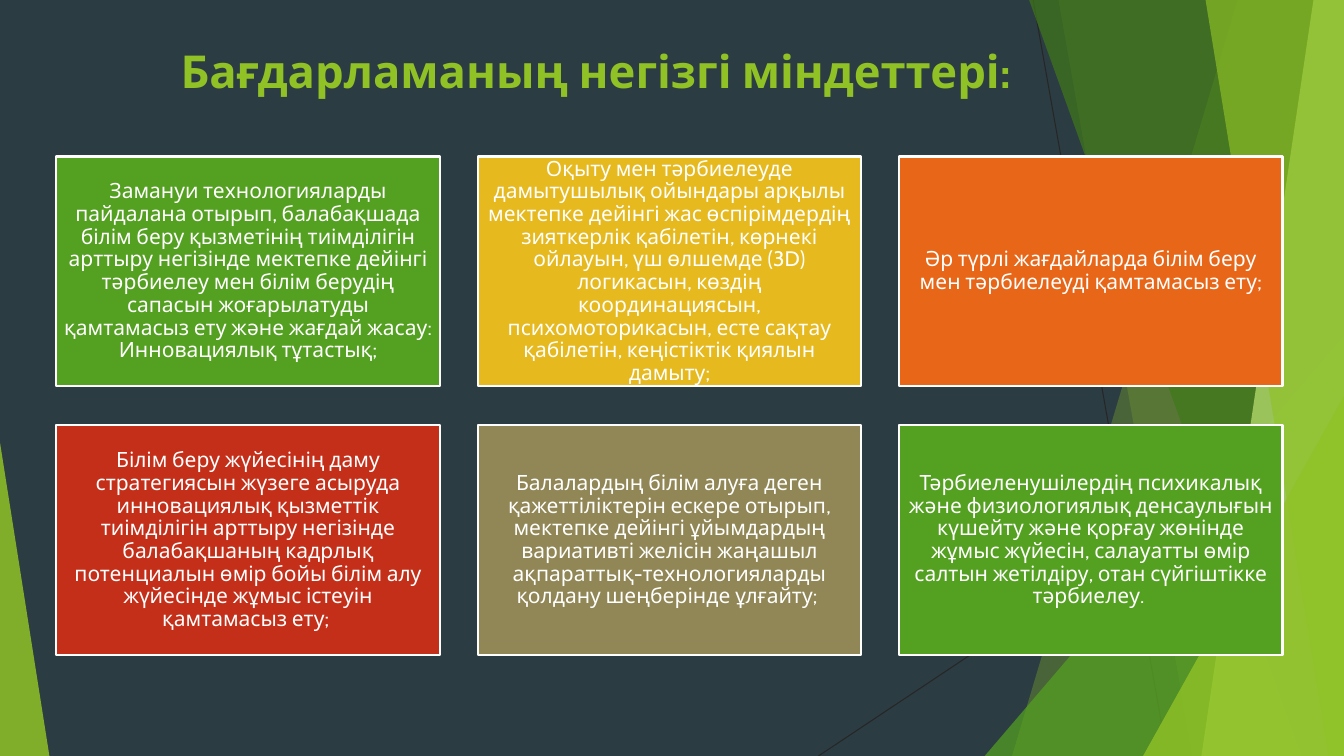
from dataclasses import dataclass

from lxml import etree
from pptx import Presentation
from pptx import util as u
from pptx.dml import color
from pptx.enum import shapes, text
from pptx.oxml import ns

WIDTH, HEIGHT = 960, 540
FONT = "Cabin"
LIME, GREEN, WHITE = "90C226", "54A021", "FFFFFF"

CARD_LEFT, CARD_TOP = 40.3, 111.8
CARD_WIDTH, CARD_HEIGHT = 273.8, 164.2
COLUMN_STEP, ROW_STEP = 301, 192
COLUMNS = 3


@dataclass
class Facet:
    """A full-height band from a slanted left edge to the slide's right edge."""
    top_left: float
    bottom_left: float
    fill: str
    opacity: int


@dataclass
class Triangle:
    """A triangle standing on the slide's bottom edge."""
    left: float
    top: float
    width: float
    apex: float
    fill: str
    opacity: int


@dataclass
class Line:
    x1: float
    y1: float
    x2: float
    y2: float


@dataclass
class Card:
    fill: str
    wording: str


LINES = [Line(738, 0, 833.8, HEIGHT), Line(WIDTH, 290.2, 584.6, HEIGHT)]

BACKDROP = [
    Facet(884.2, 722.9, LIME, 30),
    Facet(756, 851.8, LIME, 20),
    Triangle(703.4, 239.8, 256.6, 1, GREEN, 72),
    Facet(735.1, 929.5, "3F7819", 70),
    Facet(938.2, 858.2, "C0E474", 70),
    Facet(861.1, 949, LIME, 65),
    Triangle(816.5, 283, 143.5, 1, LIME, 80),
    Triangle(0, 316.1, 35.3, 0, LIME, 85),
]

CARDS = [
    Card(GREEN, "Замануи технологияларды пайдалана отырып, балабақшада білім беру "
         "қызметінің тиімділігін арттыру негізінде мектепке дейінгі тәрбиелеу мен "
         "білім берудің сапасын жоғарылатуды қамтамасыз ету және жағдай жасау: "
         "Инновациялық тұтастық;"),
    Card("E6B91E", "Оқыту мен тәрбиелеуде дамытушылық ойындары арқылы мектепке дейінгі "
         "жас өспірімдердің зияткерлік қабілетін, көрнекі ойлауын, үш өлшемде (3D) "
         "логикасын, көздің координациясын, психомоторикасын, есте сақтау қабілетін, "
         "кеңістіктік қиялын дамыту;"),
    Card("E76618", "Әр түрлі жағдайларда білім беру мен тәрбиелеуді қамтамасыз ету;"),
    Card("C42F1A", "Білім беру жүйесінің даму стратегиясын жүзеге асыруда инновациялық "
         "қызметтік тиімділігін арттыру негізінде балабақшаның кадрлық потенциалын "
         "өмір бойы білім алу жүйесінде жұмыс істеуін қамтамасыз ету; "),
    Card("918655", "Балалардың білім алуға деген қажеттіліктерін ескере отырып, мектепке "
         "дейінгі ұйымдардың вариативті желісін жаңашыл ақпараттық-технологияларды "
         "қолдану шеңберінде ұлғайту; "),
    Card(GREEN, "Тәрбиеленушілердің психикалық және физиологиялық денсаулығын күшейту "
         "және қорғау жөнінде жұмыс жүйесін, салауатты өмір салтын жетілдіру, отан "
         "сүйгіштікке тәрбиелеу. "),
]


def rgb(value: str) -> color.RGBColor:
    return color.RGBColor.from_string(value)


def paint(shape, fill: str) -> None:
    shape.shadow.inherit = False
    shape.fill.solid()
    shape.fill.fore_color.rgb = rgb(fill)


def set_opacity(shape, percent: int) -> None:
    solid = shape.element.spPr.find(ns.qn("a:solidFill"))
    etree.SubElement(solid[0], ns.qn("a:alpha"), val=str(percent * 1000))


def write(shape, wording: str, size: float, fill: str, bold: bool = False):
    """Put one centred run into the shape and return its paragraph."""
    shape.text_frame.word_wrap = True
    paragraph = shape.text_frame.paragraphs[0]
    paragraph.alignment = text.PP_ALIGN.CENTER
    run = paragraph.add_run()
    run.text = wording
    run.font.name, run.font.size, run.font.bold = FONT, u.Pt(size), bold
    run.font.color.rgb = rgb(fill)
    return paragraph


def draw_line(slide, line: Line) -> None:
    connector = slide.shapes.add_connector(
        shapes.MSO_CONNECTOR.STRAIGHT,
        u.Pt(line.x1), u.Pt(line.y1), u.Pt(line.x2), u.Pt(line.y2))
    connector.line.color.rgb = rgb("262626")
    connector.line.width = u.Pt(0.75)
    etree.SubElement(connector.element.spPr, ns.qn("a:effectLst"))


def add_facet(slide, facet: Facet):
    builder = slide.shapes.build_freeform(u.Pt(facet.top_left), 0)
    builder.add_line_segments([
        (u.Pt(WIDTH), 0), (u.Pt(WIDTH), u.Pt(HEIGHT)),
        (u.Pt(facet.bottom_left), u.Pt(HEIGHT))])
    return builder.convert_to_shape()


def add_triangle(slide, triangle: Triangle):
    shape = slide.shapes.add_shape(
        shapes.MSO_SHAPE.ISOSCELES_TRIANGLE, u.Pt(triangle.left), u.Pt(triangle.top),
        u.Pt(triangle.width), u.Pt(HEIGHT - triangle.top))
    shape.adjustments[0] = triangle.apex
    return shape


def draw_backdrop(slide) -> None:
    slide.background.fill.solid()
    slide.background.fill.fore_color.rgb = rgb("2C3C43")
    for line in LINES:
        draw_line(slide, line)
    for piece in BACKDROP:
        add = add_facet if isinstance(piece, Facet) else add_triangle
        shape = add(slide, piece)
        paint(shape, piece.fill)
        set_opacity(shape, piece.opacity)
        shape.line.fill.background()


def draw_title(slide) -> None:
    title = slide.shapes.add_textbox(u.Pt(87.1), u.Pt(27.4), u.Pt(676.8), u.Pt(51.8))
    write(title, "Бағдарламаның негізгі міндеттері:", 32.4, LIME, bold=True)


def draw_card(slide, card: Card, row: int, column: int) -> None:
    shape = slide.shapes.add_shape(
        shapes.MSO_SHAPE.RECTANGLE,
        u.Pt(CARD_LEFT + column * COLUMN_STEP), u.Pt(CARD_TOP + row * ROW_STEP),
        u.Pt(CARD_WIDTH), u.Pt(CARD_HEIGHT))
    paint(shape, card.fill)
    shape.line.color.rgb = rgb(WHITE)
    shape.line.width = u.Pt(1.5)
    frame = shape.text_frame
    frame.vertical_anchor = text.MSO_ANCHOR.MIDDLE
    frame.margin_left = frame.margin_right = u.Pt(4.5)
    frame.margin_top = frame.margin_bottom = u.Pt(4.5)
    write(shape, card.wording, 15, WHITE).line_spacing = 0.9


def main() -> None:
    presentation = Presentation()
    presentation.slide_width, presentation.slide_height = u.Pt(WIDTH), u.Pt(HEIGHT)
    slide = presentation.slides.add_slide(presentation.slide_layouts[6])
    draw_backdrop(slide)
    draw_title(slide)
    for index, card in enumerate(CARDS):
        draw_card(slide, card, *divmod(index, COLUMNS))
    presentation.save("out.pptx")


if __name__ == "__main__":
    main()
